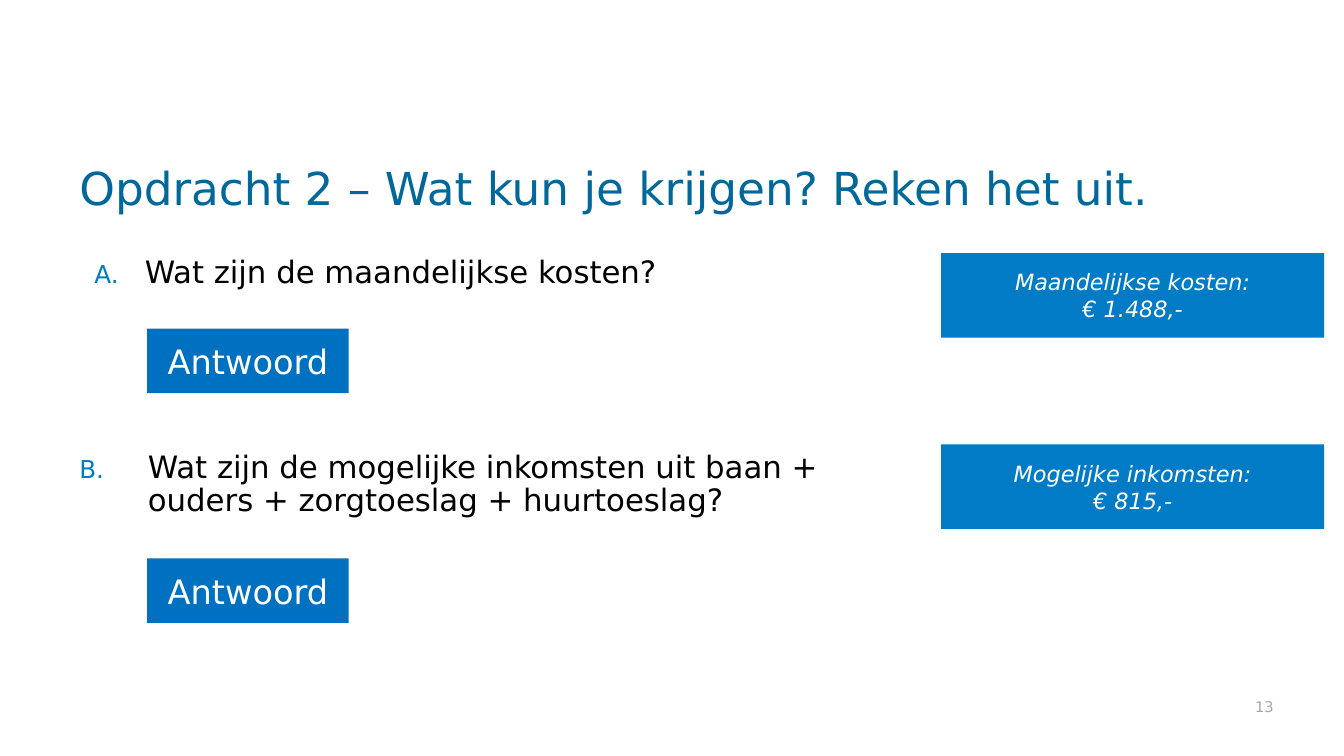
from lxml import etree
from pptx import Presentation
from pptx.dml.color import RGBColor
from pptx.enum.shapes import MSO_SHAPE
from pptx.enum.text import MSO_ANCHOR, PP_ALIGN
from pptx.oxml.ns import qn
from pptx.util import Cm, Pt

RECT = MSO_SHAPE.RECTANGLE
TOP, MIDDLE, BOTTOM = MSO_ANCHOR.TOP, MSO_ANCHOR.MIDDLE, MSO_ANCHOR.BOTTOM
LEFT, CENTER, RIGHT = PP_ALIGN.LEFT, PP_ALIGN.CENTER, PP_ALIGN.RIGHT

COLORS = {
    "title": "01689B",
    "text": "000000",
    "button": "0070C0",
    "result": "017BC6",
    "white": "FFFFFF",
    "number": "A6A6A6",
}


class Deck:
    face = "DejaVu Sans"

    def __init__(self, width, height):
        self.file = Presentation()
        self.file.slide_width, self.file.slide_height = Cm(width), Cm(height)
        self.slide = self.file.slides.add_slide(self.file.slide_layouts[6])

    def color(self, name):
        return RGBColor.from_string(COLORS[name])

    def style(self, para, size, color, align=LEFT, italic=False):
        para.alignment = align
        font = para.font
        font.name, font.size, font.italic = self.face, Pt(size), italic
        font.color.rgb = self.color(color)

    def frame(self, box, anchor=TOP):
        frame = self.slide.shapes.add_textbox(*map(Cm, box)).text_frame
        frame.word_wrap = True
        frame.vertical_anchor = anchor
        return frame

    def label(self, box, text, size, color, align=LEFT):
        frame = self.frame(box, BOTTOM)
        para = frame.paragraphs[0]
        para.text = text
        para.line_spacing = 0.9
        self.style(para, size, color, align)
        return frame

    def block(self, box, text, size, fill, italic=False):
        shape = self.slide.shapes.add_shape(RECT, *map(Cm, box))
        shape.shadow.inherit = False
        shape.fill.solid()
        shape.fill.fore_color.rgb = self.color(fill)
        shape.line.fill.background()
        frame = shape.text_frame
        frame.word_wrap = True
        frame.vertical_anchor = MIDDLE
        para = frame.paragraphs[0]
        para.text = text
        self.style(para, size, "white", CENTER, italic)

    def bullet(self, para, start, margin, indent):
        props = para._p.get_or_add_pPr()
        props.set("marL", str(Cm(margin)))
        props.set("indent", str(Cm(indent)))
        tint = etree.SubElement(props, qn("a:buClr"))
        etree.SubElement(tint, qn("a:srgbClr"), val=COLORS["result"])
        etree.SubElement(props, qn("a:buSzPct"), val="80000")
        etree.SubElement(props, qn("a:buFont"), typeface=self.face)
        etree.SubElement(props, qn("a:buAutoNum"),
                         type="alphaUcPeriod", startAt=str(start))

    def tasks(self, box, items, size, gap):
        frame = self.frame(box)
        for start, (text, margin, indent) in enumerate(items, 1):
            first = start == 1
            para = frame.paragraphs[0] if first else frame.add_paragraph()
            para.text = text
            self.bullet(para, start, margin, indent)
            para.line_spacing = 0.9
            para.space_before = Pt(0 if first else gap)
            self.style(para, size, "text")


def main():
    deck = Deck(33.87, 19.05)

    # Questions
    deck.tasks((1.75, 6.35, 21.23, 10.92), [
        ("Wat zijn de maandelijkse kosten?", 1.65, -1.27),
        ("Wat zijn de mogelijke inkomsten uit baan + ouders + "
         "zorgtoeslag + huurtoeslag?", 1.73, -1.73),
    ], 22, 115.5)

    # Title and slide number
    deck.label((1.75, 2.92, 30.35, 2.64),
               "Opdracht 2 – Wat kun je krijgen? Reken het uit.", 32.4, "title")
    number = deck.label((18.21, 17.27, 13.89, 0.89), "13", 10.5, "number", RIGHT)
    number.margin_right = 0

    # Answer buttons
    for top in (8.28, 14.07):
        deck.block((3.71, top, 5.08, 1.63), "Antwoord", 24, "button")

    # Results
    for top, text in ((6.38, "Maandelijkse kosten:\v€ 1.488,-"),
                      (11.2, "Mogelijke inkomsten:\v€ 815,-")):
        deck.block((23.72, top, 9.65, 2.13), text, 16, "result", True)

    deck.file.save("out.pptx")


if __name__ == "__main__":
    main()
